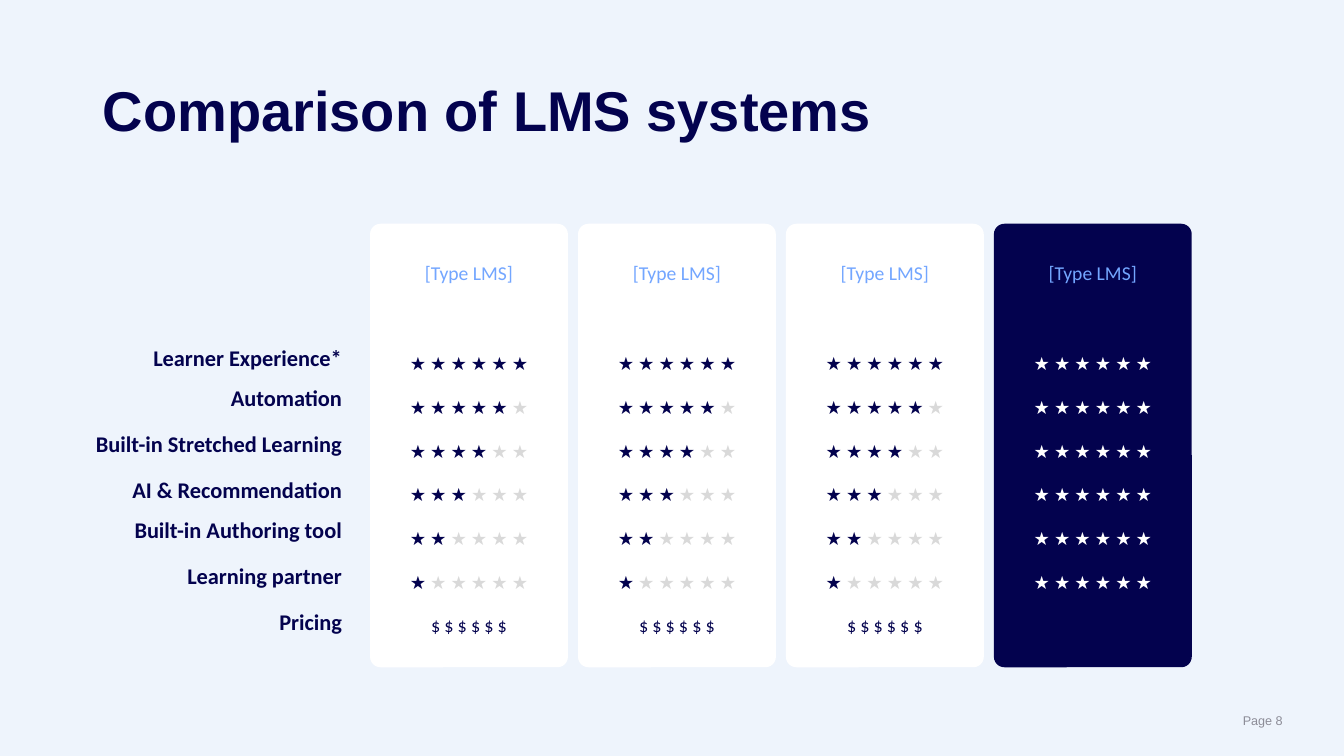
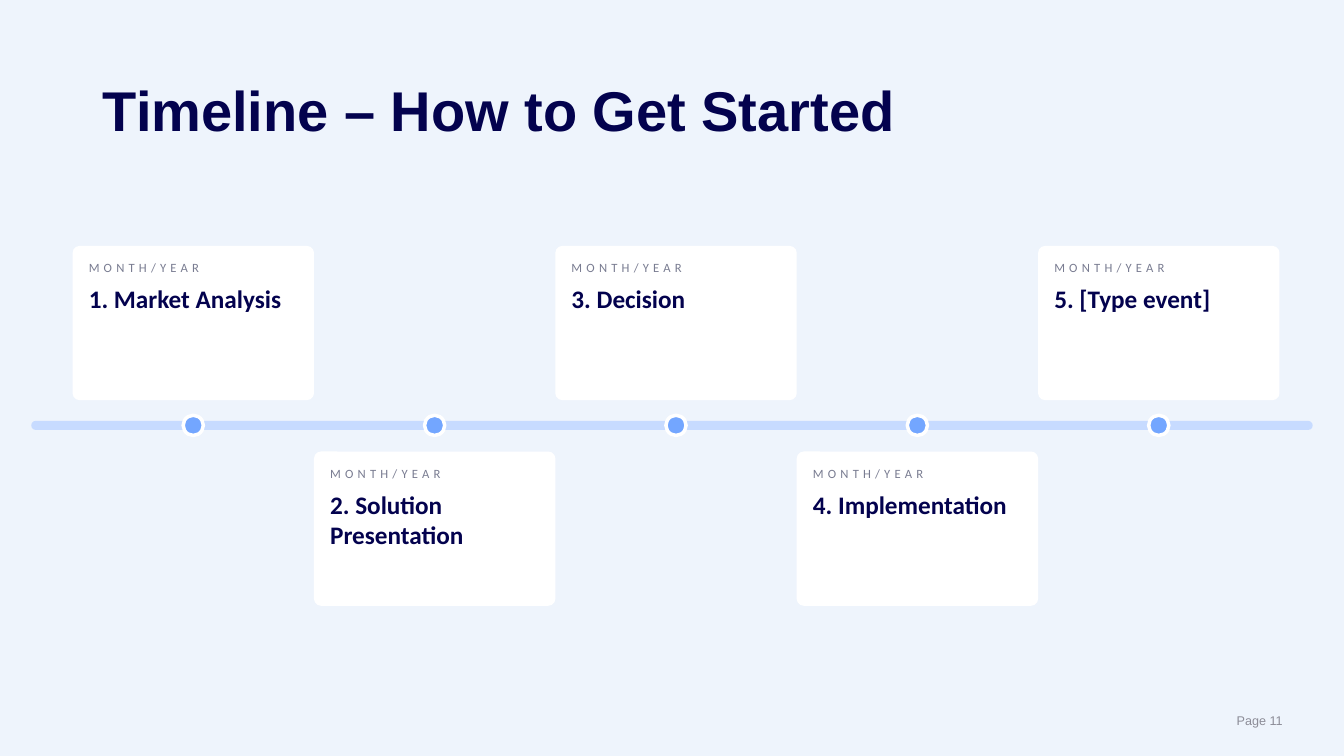
from pptx import Presentation
from pptx.dml.color import RGBColor
from pptx.enum.shapes import MSO_SHAPE
from pptx.enum.text import MSO_ANCHOR, PP_ALIGN
from pptx.util import Inches, Pt

COLORS = {
    "background": "EEF4FC",
    "navy": "03024E",
    "white": "FFFFFF",
    "sky": "73A6FF",
    "pale_blue": "C7DBFF",
    "unlit": "D9D9D9",
    "date": "797C91",
    "footer": "8C8C97",
}
HEADING_FONT, BODY_FONT = "Arial", "Calibri"
SLIDE_WIDTH, SLIDE_HEIGHT = 13.33, 7.5

# Comparison grid
SYSTEM_COUNT, MAX_STARS = 4, 6
GRID_LEFT, GRID_RIGHT, GRID_TOP, GRID_HEIGHT = 3.67, 11.82, 2.22, 4.4
GRID_GAP = 0.1
COLUMN_PITCH = (GRID_RIGHT - GRID_LEFT + GRID_GAP) / SYSTEM_COUNT
COLUMN_WIDTH = COLUMN_PITCH - GRID_GAP
HEADER_TOP, ROWS_TOP, ROWS_HEIGHT = 2.54, 3.23, 3.24
# A line break inside a label group leaves out the paragraph spacing
LABEL_GROUPS = [
    "Learner Experience*\vAutomation",
    "Built-in Stretched Learning",
    "AI & Recommendation\vBuilt-in Authoring tool",
    "Learning partner",
    "Pricing",
]

# Timeline
EVENTS = [
    "1. Market Analysis",
    "2. Solution Presentation",
    "3. Decision",
    "4. Implementation",
    "5. [Type event]",
]
TIMELINE_LEFT, TIMELINE_RIGHT = 0.72, 12.69
CARD_WIDTH = (TIMELINE_RIGHT - TIMELINE_LEFT) / len(EVENTS)
CARD_HEIGHT, CARD_TOPS = 1.53, (2.44, 4.48)
AXIS_Y, AXIS_HEIGHT, AXIS_MARGIN, DOT_SIZE = 4.22, 0.09, 0.31, 0.2


def color(name):
    return RGBColor.from_string(COLORS[name])


def style(font, size, fill, bold=False, name=BODY_FONT):
    font.name, font.size, font.bold = name, Pt(size), bold
    font.color.rgb = color(fill)


def add_span(para, text, size, fill, bold=False, name=BODY_FONT):
    span = para.add_run()
    span.text = text
    style(span.font, size, fill, bold, name)
    return span


def add_text_box(page, left, top, width, height):
    box = page.shapes.add_textbox(*map(Inches, (left, top, width, height)))
    box.text_frame.word_wrap = True
    return box.text_frame


def add_panel(page, kind, left, top, width, height, fill, corner=None):
    panel = page.shapes.add_shape(kind, *map(Inches, (left, top, width, height)))
    panel.shadow.inherit = False
    panel.fill.solid()
    panel.fill.fore_color.rgb = color(fill)
    panel.line.fill.background()
    if corner is not None:
        panel.adjustments[0] = corner
    return panel


def set_up_layout(deck):
    """Give the shared background and title place to all pages."""
    background = deck.slide_master.background.fill
    background.solid()
    background.fore_color.rgb = color("background")
    layout = deck.slide_layouts.get_by_name("Title Only")
    title = layout.placeholders[0]
    title.left, title.top, title.width, title.height = map(
        Inches, (0.92, 0.4, 11.5, 1.45))
    title.text_frame.vertical_anchor = MSO_ANCHOR.MIDDLE
    return layout


def add_page(deck, layout, title, number):
    page = deck.slides.add_slide(layout)
    page.shapes.title.text_frame.text = title
    para = page.shapes.title.text_frame.paragraphs[0]
    para.alignment, para.line_spacing = PP_ALIGN.LEFT, 0.9
    style(para.runs[0].font, 40, "navy", True, HEADING_FONT)

    # Footer
    frame = add_text_box(page, 11.64, 6.95, 1.18, 0.4)
    frame.vertical_anchor = MSO_ANCHOR.MIDDLE
    frame.paragraphs[0].alignment = PP_ALIGN.RIGHT
    add_span(frame.paragraphs[0], f"Page {number}", 9, "footer", name=HEADING_FONT)
    return page


def add_labels(page):
    frame = add_text_box(page, 0.5, ROWS_TOP, 2.99, 2.3)
    frame.text = "\n".join(LABEL_GROUPS)
    for index, para in enumerate(frame.paragraphs):
        para.alignment, para.line_spacing = PP_ALIGN.RIGHT, 1.5
        if index:
            para.space_before = Pt(4)
        for span in para.runs:
            style(span.font, 16, "navy", True)


def add_system(page, column, scores, price, fill, star_color):
    left = GRID_LEFT + column * COLUMN_PITCH
    add_panel(page, MSO_SHAPE.ROUNDED_RECTANGLE, left, GRID_TOP,
              COLUMN_WIDTH, GRID_HEIGHT, fill, 0.053)
    header = add_text_box(page, left, HEADER_TOP, COLUMN_WIDTH, 0.34).paragraphs[0]
    header.alignment = PP_ALIGN.CENTER
    add_span(header, "[Type LMS]", 14, "sky")

    # One line of stars per score, then the price
    stars = " ".join("★" * MAX_STARS)
    rows = [[(stars[:2 * score], star_color, True), (stars[2 * score:], "unlit", True)]
            for score in scores]
    if price:
        rows.append([(price, "navy", False)])
    frame = add_text_box(page, left, ROWS_TOP, COLUMN_WIDTH, ROWS_HEIGHT)
    for index, row in enumerate(rows):
        para = frame.add_paragraph() if index else frame.paragraphs[0]
        para.alignment, para.line_spacing = PP_ALIGN.CENTER, 2.0
        for text, span_color, bold in row:
            if text:
                add_span(para, text, 13, span_color, bold)


def add_event(page, index, event):
    left = TIMELINE_LEFT + index * CARD_WIDTH
    card = add_panel(page, MSO_SHAPE.ROUNDED_RECTANGLE, left, CARD_TOPS[index % 2],
                     CARD_WIDTH, CARD_HEIGHT, "white", 0.045)
    frame = card.text_frame
    frame.word_wrap, frame.vertical_anchor = True, MSO_ANCHOR.TOP
    frame.margin_left = frame.margin_top = Inches(0.14)
    frame.margin_top = Inches(0.12)
    date, name = frame.paragraphs[0], frame.add_paragraph()
    date.alignment = name.alignment = PP_ALIGN.LEFT
    name.space_before = Pt(6)
    span = add_span(date, "MONTH/YEAR", 9, "date")
    span.font._element.set("spc", "300")
    add_span(name, event, 18, "navy", True)

    # Marker on the axis
    dot = add_panel(page, MSO_SHAPE.OVAL, left + (CARD_WIDTH - DOT_SIZE) / 2,
                    AXIS_Y - DOT_SIZE / 2, DOT_SIZE, DOT_SIZE, "sky")
    dot.line.color.rgb = color("white")
    dot.line.width = Pt(2.5)


def build_comparison(deck, layout):
    page = add_page(deck, layout, "Comparison of LMS systems", 8)
    add_labels(page)
    last = SYSTEM_COUNT - 1
    for column in range(last):
        add_system(page, column, range(MAX_STARS, 0, -1),
                   " ".join("$" * MAX_STARS), "white", "navy")
    add_system(page, last, [MAX_STARS] * MAX_STARS, None, "navy", "white")


def build_timeline(deck, layout):
    page = add_page(deck, layout, "Timeline – How to Get Started", 11)
    add_panel(page, MSO_SHAPE.ROUNDED_RECTANGLE, AXIS_MARGIN, AXIS_Y - AXIS_HEIGHT / 2,
              SLIDE_WIDTH - 2 * AXIS_MARGIN, AXIS_HEIGHT, "pale_blue", 0.5)
    for index, event in enumerate(EVENTS):
        add_event(page, index, event)


def main():
    deck = Presentation()
    deck.slide_width, deck.slide_height = Inches(SLIDE_WIDTH), Inches(SLIDE_HEIGHT)
    layout = set_up_layout(deck)
    build_comparison(deck, layout)
    build_timeline(deck, layout)
    deck.save("out.pptx")


if __name__ == "__main__":
    main()
